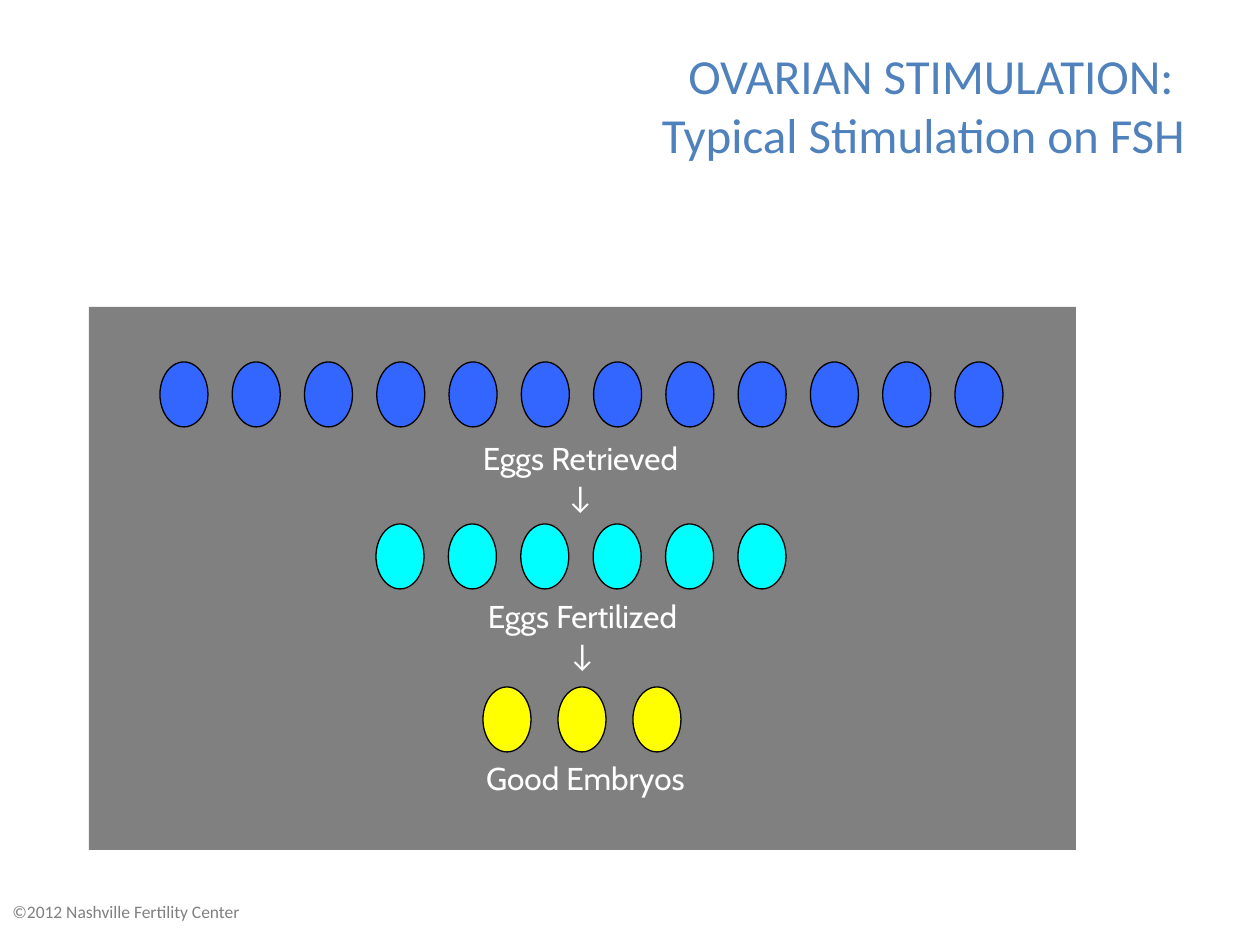
from dataclasses import dataclass

from pptx import Presentation
from pptx.dml.color import RGBColor
from pptx.enum.shapes import MSO_SHAPE as Shape
from pptx.enum.text import MSO_ANCHOR as Anchor, PP_ALIGN as Align
from pptx.util import Pt

EMU_PER_PX = 914400 / 126


@dataclass(frozen=True)
class Theme:
    title: str = "4F81BD"
    footer: str = "808080"
    panel: str = "808080"
    label: str = "FFFFFF"
    outline: str = "000000"
    retrieved: str = "3366FF"
    fertilized: str = "00FFFF"
    embryo: str = "FFFF00"
    main_font: str = "Calibri"
    label_font: str = "Cabin"
    title_size: int = 28
    label_size: int = 18
    footer_size: int = 10


THEME = Theme()


def px(*lengths):
    return [round(length * EMU_PER_PX) for length in lengths]


def add_run(paragraph, text, font, size, color):
    run = paragraph.add_run()
    run.text = text
    run.font.name = font
    run.font.size = Pt(size)
    run.font.color.rgb = RGBColor.from_string(color)


def add_text_frame(shapes, box):
    frame = shapes.add_textbox(*px(*box)).text_frame
    frame.word_wrap = True
    frame.vertical_anchor = Anchor.TOP
    return frame


def add_filled(shapes, kind, box, fill, outline=None):
    shape = shapes.add_shape(kind, *px(*box))
    shape.shadow.inherit = False
    shape.fill.solid()
    shape.fill.fore_color.rgb = RGBColor.from_string(fill)
    if outline:
        shape.line.color.rgb = RGBColor.from_string(outline)
        shape.line.width = Pt(0.75)
    else:
        shape.line.fill.background()


def add_title(shapes, box):
    frame = add_text_frame(shapes, box)
    frame.margin_top = px(8)[0]
    paragraph = frame.paragraphs[0]
    paragraph.alignment = Align.RIGHT
    style = THEME.main_font, THEME.title_size, THEME.title
    add_run(paragraph, "OVARIAN STIMULATION: ", *style)
    paragraph.add_line_break()
    add_run(paragraph, "Typical Stimulation on FSH", *style)


def add_footer(shapes, box):
    paragraph = add_text_frame(shapes, box).paragraphs[0]
    add_run(paragraph, "©2012 Nashville Fertility Center",
            THEME.main_font, THEME.footer_size, THEME.footer)


def add_egg_row(shapes, box, count, color):
    """Spread the eggs evenly from the left to the right edge of the box."""
    left, top, width, height = box
    egg_width = 48
    pitch = (width - egg_width) / (count - 1)
    for i in range(count):
        egg = left + i * pitch, top, egg_width, height
        add_filled(shapes, Shape.OVAL, egg, color, THEME.outline)


def add_stage_label(shapes, box, text, has_arrow):
    frame = add_text_frame(shapes, box)
    lines = [(text, THEME.label_font)]
    if has_arrow:
        lines.append(("↓", THEME.main_font))
    for i, (line, font) in enumerate(lines):
        paragraph = frame.add_paragraph() if i else frame.paragraphs[0]
        paragraph.alignment = Align.CENTER
        add_run(paragraph, line, font, THEME.label_size, THEME.label)


def add_stimulation_panel(shapes, box):
    left, top, _, _ = box
    parts = shapes.add_group_shape().shapes
    add_filled(parts, Shape.RECTANGLE, box, THEME.panel)

    # Stage: count, colour, row left, top and width, label, label left and top
    stages = [
        (12, THEME.retrieved, 71, 55, 843, "Eggs Retrieved", 371, 126),
        (6, THEME.fertilized, 287, 217, 410, "Eggs Fertilized", 373, 284),
        (3, THEME.embryo, 394, 380, 198, "Good Embryos", 376, 446),
    ]
    for i, (count, color, row_x, row_y, row_width,
            label, label_x, label_y) in enumerate(stages):
        has_next = i < len(stages) - 1
        add_egg_row(parts, (left + row_x, top + row_y, row_width, 65),
                    count, color)
        add_stage_label(parts, (left + label_x, top + label_y, 241,
                                89 if has_next else 50), label, has_next)


def main():
    presentation = Presentation()
    presentation.slide_width, presentation.slide_height = px(1260, 945)
    shapes = presentation.slides.add_slide(presentation.slide_layouts[6]).shapes

    add_footer(shapes, (0, 895, 399, 50))
    add_title(shapes, (21, 38, 1176, 157))
    add_stimulation_panel(shapes, (89, 307, 987, 543))

    presentation.save("out.pptx")


if __name__ == "__main__":
    main()
